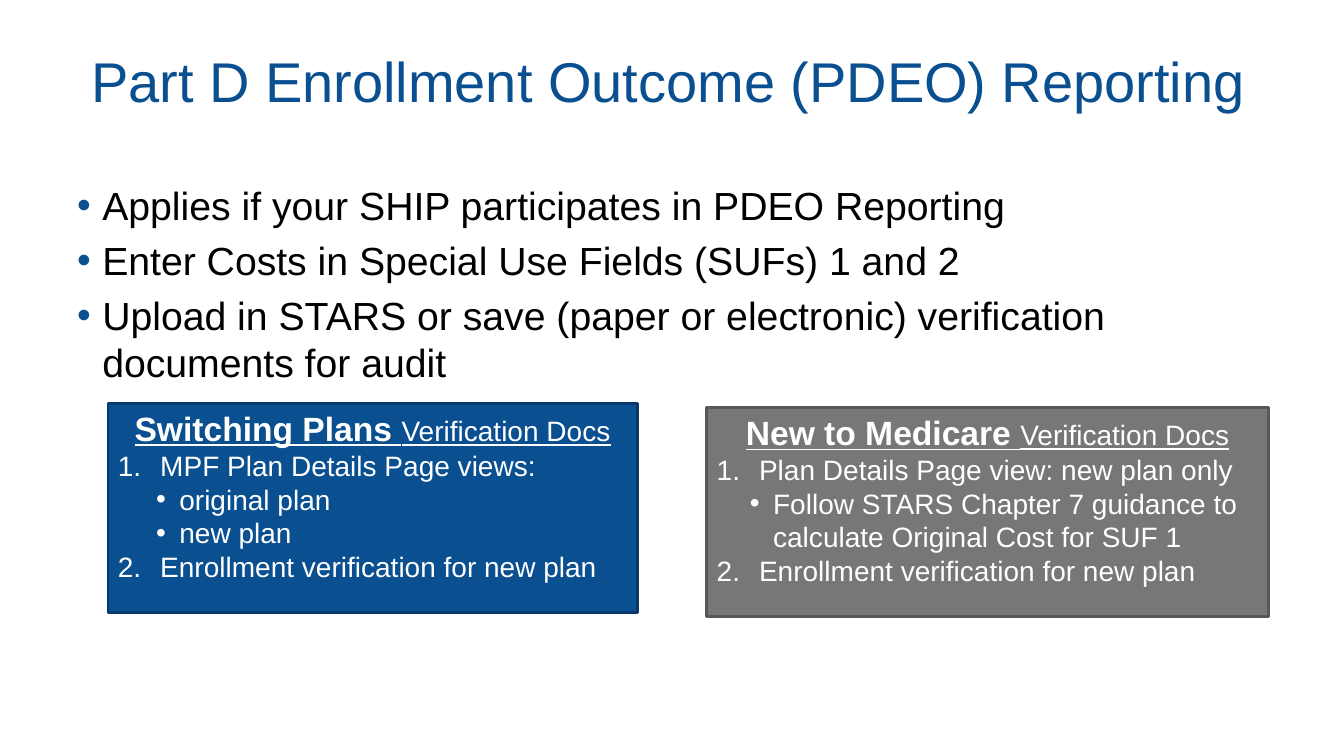
from lxml import etree
from pptx import Presentation
from pptx.dml.color import RGBColor
from pptx.enum.shapes import MSO_SHAPE
from pptx.enum.text import MSO_ANCHOR, PP_ALIGN
from pptx.oxml.ns import qn
from pptx.util import Inches, Pt

RECTANGLE = MSO_SHAPE.RECTANGLE
TOP, MIDDLE = MSO_ANCHOR.TOP, MSO_ANCHOR.MIDDLE
LEFT, CENTER = PP_ALIGN.LEFT, PP_ALIGN.CENTER
WIDTH, HEIGHT = Inches(13.33), Inches(7.5)
FONT = "Arial"
BLUE, NAVY, GRAY, DARK_GRAY = "0A4F90", "073A6B", "777777", "585858"
WHITE, BLACK = "FFFFFF", "000000"

TITLE = "Part D Enrollment Outcome (PDEO) Reporting"
POINTS = [
    "Applies if your SHIP participates in PDEO Reporting",
    "Enter Costs in Special Use Fields (SUFs) 1 and 2",
    "Upload in STARS or save (paper or electronic) verification documents for audit",
]
SWITCHING_DOCS = [
    (0, "MPF Plan Details Page views:"),
    (1, "original plan"),
    (1, "new plan"),
    (0, "Enrollment verification for new plan"),
]
NEW_DOCS = [
    (0, "Plan Details Page view: new plan only"),
    (1, "Follow STARS Chapter 7 guidance to calculate Original Cost for SUF 1"),
    (0, "Enrollment verification for new plan"),
]


def color(value):
    """Turn a hex string into a colour."""
    return RGBColor.from_string(value)


def area(left, top, width, height):
    """Turn percentages of the slide into a position and size."""
    return (int(WIDTH * left / 100), int(HEIGHT * top / 100),
            int(WIDTH * width / 100), int(HEIGHT * height / 100))


def add_run(paragraph, text, size, ink, bold=False, underline=False):
    """Append one formatted run."""
    run = paragraph.add_run()
    run.text = text
    font = run.font
    font.name, font.size, font.bold, font.underline = FONT, Pt(size), bold, underline
    font.color.rgb = color(ink)


def set_marker(paragraph, margin, hanging, numbered=False, ink=None):
    """Give a paragraph a hanging bullet or number."""
    properties = paragraph._p.get_or_add_pPr()
    properties.set("marL", str(Inches(margin)))
    properties.set("indent", str(-Inches(hanging)))
    if ink:
        bullet_color = etree.SubElement(properties, qn("a:buClr"))
        etree.SubElement(bullet_color, qn("a:srgbClr"), val=ink)
    etree.SubElement(properties, qn("a:buFont"), typeface=FONT)
    if numbered:
        etree.SubElement(properties, qn("a:buAutoNum"), type="arabicPeriod")
    else:
        etree.SubElement(properties, qn("a:buChar"), char="•")


def add_title(slide):
    """Place and format the slide title."""
    title = slide.shapes.title
    title.left, title.top, title.width, title.height = area(5, 4.4, 89.4, 12.5)
    title.text_frame.vertical_anchor = MIDDLE
    paragraph = title.text_frame.paragraphs[0]
    paragraph.alignment = CENTER
    add_run(paragraph, TITLE, 40, BLUE)


def add_points(slide):
    """Add the main bullet list."""
    frame = slide.shapes.add_textbox(*area(5, 23.33, 92.25, 30)).text_frame
    frame.word_wrap = True
    for index, text in enumerate(POINTS):
        paragraph = frame.add_paragraph() if index else frame.paragraphs[0]
        set_marker(paragraph, 0.25, 0.25, ink=BLUE)
        paragraph.space_before = Pt(5.6 if index else 0)
        add_run(paragraph, text, 28, BLACK)


def add_panel(slide, position, fill, border, heading, documents, bullet_margin):
    """Add a filled box with a heading and its numbered documents."""
    panel = slide.shapes.add_shape(RECTANGLE, *area(*position))
    panel.shadow.inherit = False
    panel.fill.solid()
    panel.fill.fore_color.rgb = color(fill)
    panel.line.color.rgb = color(border)
    panel.line.width = Pt(2)
    frame = panel.text_frame
    frame.word_wrap = True
    frame.vertical_anchor = TOP
    paragraph = frame.paragraphs[0]
    paragraph.alignment = CENTER
    add_run(paragraph, heading + " ", 24, WHITE, bold=True, underline=True)
    add_run(paragraph, "Verification Docs", 20, WHITE, underline=True)
    for level, text in documents:
        paragraph = frame.add_paragraph()
        paragraph.alignment = LEFT
        paragraph.level = level
        if level:
            set_marker(paragraph, bullet_margin, 0.23)
        else:
            set_marker(paragraph, 0.42, 0.42, numbered=True)
        add_run(paragraph, text, 20, WHITE)


def main():
    """Build and save the slide."""
    presentation = Presentation()
    presentation.slide_width, presentation.slide_height = WIDTH, HEIGHT
    slide = presentation.slides.add_slide(presentation.slide_layouts[5])
    add_title(slide)
    add_points(slide)
    add_panel(slide, (8.03, 53.33, 39.38, 27.73), BLUE, NAVY,
              "Switching Plans", SWITCHING_DOCS, 0.61)
    add_panel(slide, (52.59, 53.87, 41.78, 27.73), GRAY, DARK_GRAY,
              "New to Medicare", NEW_DOCS, 0.56)
    presentation.save("out.pptx")


if __name__ == "__main__":
    main()
